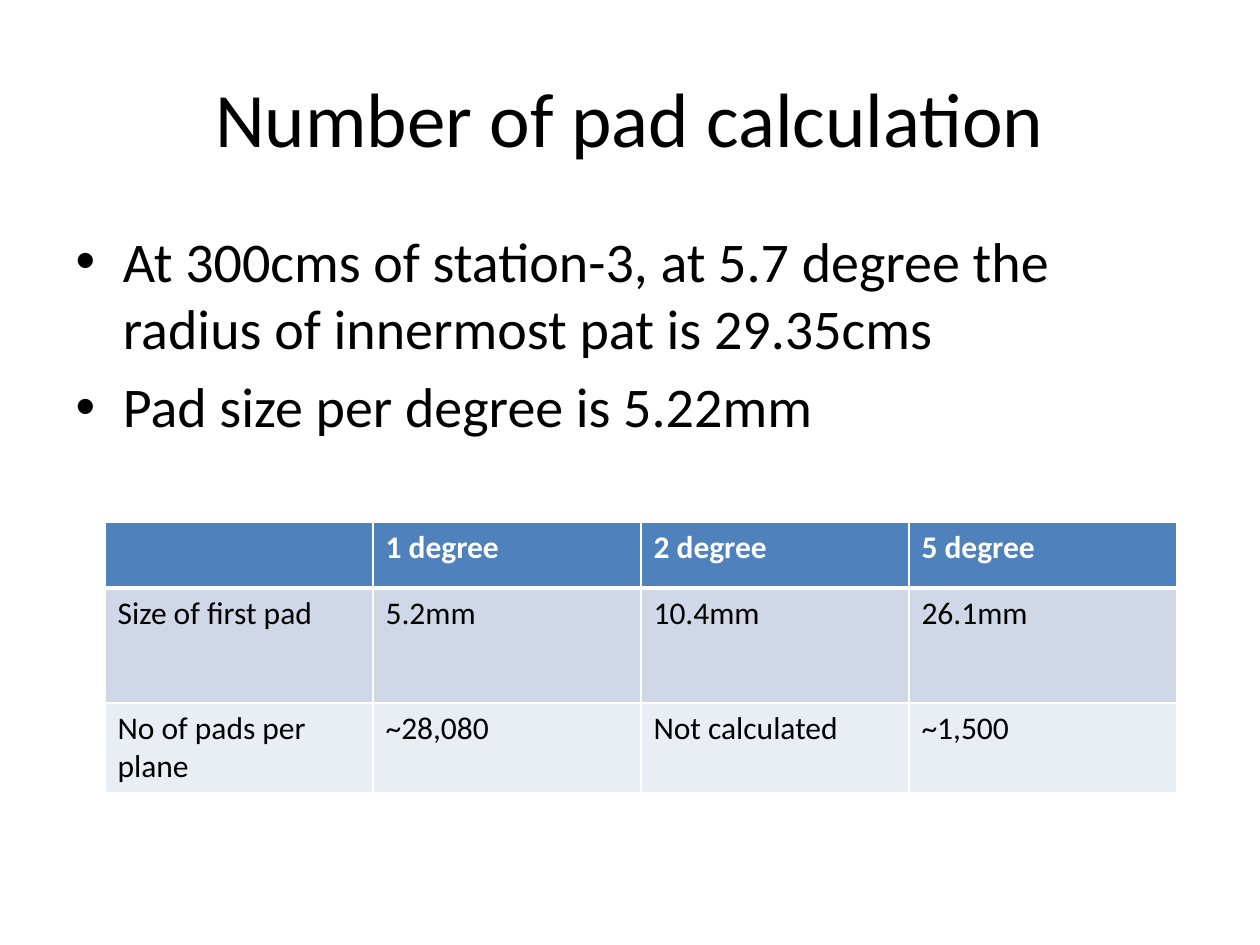
"""Build the slide on the number of pads per plane."""
from lxml import etree
from pptx import Presentation
from pptx.dml.color import RGBColor
from pptx.enum.text import MSO_ANCHOR, PP_ALIGN
from pptx.oxml.ns import qn
from pptx.util import Pt

PX = 914400 / 126
FONT = "Calibri"
MIDDLE = MSO_ANCHOR.MIDDLE
CENTER = PP_ALIGN.CENTER
BLACK = RGBColor(0x00, 0x00, 0x00)
WHITE = RGBColor(0xFF, 0xFF, 0xFF)
BLUE = RGBColor(0x4F, 0x81, 0xBD)
BAND_DARK = RGBColor(0xD0, 0xD8, 0xE8)
BAND_LIGHT = RGBColor(0xE9, 0xED, 0xF4)


def add_run(p, text, size, color, bold=False):
    r = p.add_run()
    r.text = text
    r.font.name = FONT
    r.font.size = Pt(size)
    r.font.bold = bold
    r.font.color.rgb = color


def add_border(cell, side, width):
    ln = etree.SubElement(cell._tc.get_or_add_tcPr(), qn(f"a:ln{side}"), w=str(Pt(width)))
    fill = etree.SubElement(ln, qn("a:solidFill"))
    etree.SubElement(fill, qn("a:srgbClr"), val=str(WHITE))


prs = Presentation()
prs.slide_width = int(1260 * PX)
prs.slide_height = int(945 * PX)
s = prs.slides.add_slide(prs.slide_layouts[1])

title, body = s.placeholders
for sp, top, height in ((title, 38, 157), (body, 220, 624)):
    sp.left, sp.width = int(63 * PX), int(1134 * PX)
    sp.top, sp.height = int(top * PX), int(height * PX)

title.text_frame.vertical_anchor = MIDDLE
p = title.text_frame.paragraphs[0]
p.alignment = CENTER
add_run(p, "Number of pad calculation", 44, BLACK)

bullets = [
    "At 300cms of station-3, at 5.7 degree the radius of innermost pat is 29.35cms",
    "Pad size per degree is 5.22mm",
]
tf = body.text_frame
for i, text in enumerate(bullets):
    p = tf.add_paragraph() if i else tf.paragraphs[0]
    p.space_before = Pt(6.4 if i else 0)
    add_run(p, text, 32, BLACK)

rows = [
    ["", "1 degree", "2 degree", "5 degree"],
    ["Size of first pad", "5.2mm", "10.4mm", "26.1mm"],
    ["No of pads per plane", "~28,080", "Not calculated", "~1,500"],
]
heights = [66, 115, 89]
fills = [BLUE, BAND_DARK, BAND_LIGHT]
table = s.shapes.add_table(3, 4, int(105 * PX), int(522 * PX),
                           int(1072 * PX), int(sum(heights) * PX)).table
for col in table.columns:
    col.width = int(268 * PX)
for i, texts in enumerate(rows):
    table.rows[i].height = int(heights[i] * PX)
    for j, text in enumerate(texts):
        cell = table.cell(i, j)
        for side in "LRTB":
            header_rule = (i, side) in ((0, "B"), (1, "T"))
            add_border(cell, side, 3 if header_rule else 1)
        cell.fill.solid()
        cell.fill.fore_color.rgb = fills[i]
        if text:
            add_run(cell.text_frame.paragraphs[0], text, 18, BLACK if i else WHITE, i == 0)

prs.save("out.pptx")
